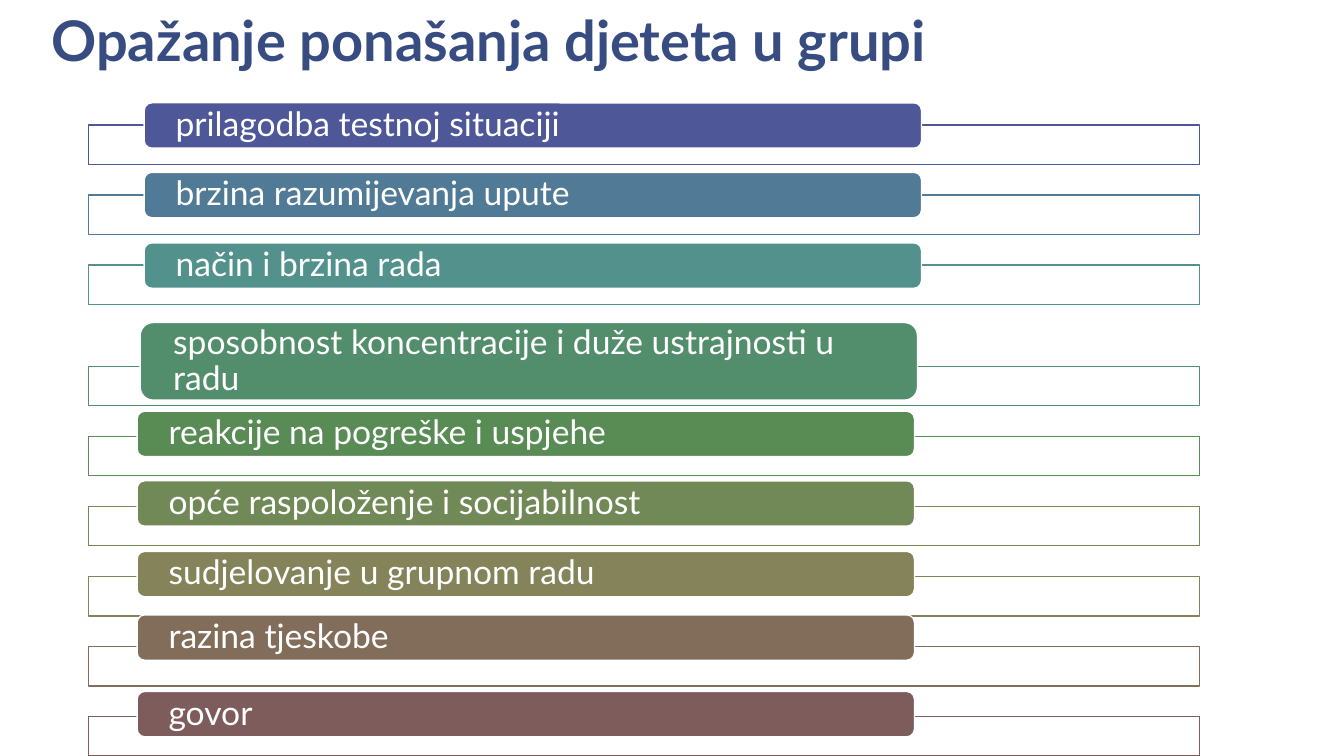
from pptx import Presentation
from pptx.dml.color import RGBColor
from pptx.enum.shapes import MSO_SHAPE
from pptx.enum.text import MSO_ANCHOR, MSO_AUTO_SIZE, PP_ALIGN
from pptx.util import Inches, Pt

RECT = MSO_SHAPE.RECTANGLE
ROUNDED = MSO_SHAPE.ROUNDED_RECTANGLE
TOP, MIDDLE = MSO_ANCHOR.TOP, MSO_ANCHOR.MIDDLE
LEFT = PP_ALIGN.LEFT
NO_FIT = MSO_AUTO_SIZE.NONE

COLORS = {
    "white": "FFFFFF",
    "title": "374C81",
    "indigo": "4E5798",
    "blue": "507A95",
    "teal": "52918C",
    "sea": "538E6C",
    "green": "598B55",
    "moss": "718857",
    "olive": "848359",
    "brown": "816D5A",
    "wine": "7E5C5C",
}

FRAME_LEFT, FRAME_WIDTH, FRAME_HEIGHT = 0.88, 11.02, 0.39
FIRST_FRAME_TOP, FRAME_STEP = 1.24, 0.695
TALL_ROW, TALL_EXTRA = 3, 0.31
LABEL_WIDTH = 7.71

OBSERVATIONS = [
    ("prilagodba testnoj situaciji", "indigo", 1.43, 1.02, 0.45),
    ("brzina razumijevanja upute", "blue", 1.43, 1.71, 0.45),
    ("način i brzina rada", "teal", 1.43, 2.41, 0.45),
    ("sposobnost koncentracije i duže ustrajnosti u radu", "sea", 1.39, 3.2, 0.77),
    ("reakcije na pogreške i uspjehe", "green", 1.36, 4.08, 0.45),
    ("opće raspoloženje i socijabilnost", "moss", 1.36, 4.77, 0.45),
    ("sudjelovanje u grupnom radu", "olive", 1.36, 5.47, 0.45),
    ("razina tjeskobe", "brown", 1.36, 6.1, 0.45),
    ("govor", "wine", 1.36, 6.86, 0.45),
]


def color(name):
    return RGBColor.from_string(COLORS[name])


def set_all(target, values):
    for name, value in values.items():
        setattr(target, name, value)


def write_text(shape, text, size, color_name, bold, frame_format, spacing):
    frame = shape.text_frame
    set_all(frame, {"word_wrap": True, "auto_size": NO_FIT, **frame_format})
    para = frame.paragraphs[0]
    set_all(para, {"alignment": LEFT, "line_spacing": spacing, "space_before": Pt(0)})
    span = para.add_run()
    span.text = text
    set_all(span.font, {"name": "Lato", "size": Pt(size), "bold": bold})
    span.font.color.rgb = color(color_name)


def add_title(page, text):
    title = page.shapes.title
    set_all(title, {"left": Inches(0.41), "top": Inches(0),
                    "width": Inches(12.11), "height": Inches(0.77)})
    write_text(title, text, 40, "title", True, {"vertical_anchor": TOP}, 1.0)


def add_box(page, kind, place, fill_name, line_name):
    box = page.shapes.add_shape(kind, *(Inches(value) for value in place))
    box.shadow.inherit = False
    box.fill.solid()
    box.fill.fore_color.rgb = color(fill_name)
    box.line.color.rgb = color(line_name)
    box.line.width = Pt(1)
    return box


def add_observation(page, index, text, color_name, left, top, height):
    frame_top = FIRST_FRAME_TOP + index * FRAME_STEP
    if index >= TALL_ROW:
        frame_top += TALL_EXTRA
    add_box(page, RECT, (FRAME_LEFT, frame_top, FRAME_WIDTH, FRAME_HEIGHT),
            "white", color_name)
    label = add_box(page, ROUNDED, (left, top, LABEL_WIDTH, height),
                    color_name, "white")
    label_format = {
        "vertical_anchor": MIDDLE,
        "margin_left": Inches(0.29),
        "margin_right": Inches(0.29),
        "margin_top": Inches(0),
        "margin_bottom": Inches(0),
    }
    write_text(label, text, 24, "white", False, label_format, 0.9)


def main():
    deck = Presentation()
    deck.slide_width, deck.slide_height = Inches(13.33), Inches(7.5)
    page = deck.slides.add_slide(deck.slide_layouts[5])
    add_title(page, "Opažanje ponašanja djeteta u grupi")
    for index, observation in enumerate(OBSERVATIONS):
        add_observation(page, index, *observation)
    deck.save("out.pptx")


if __name__ == "__main__":
    main()
